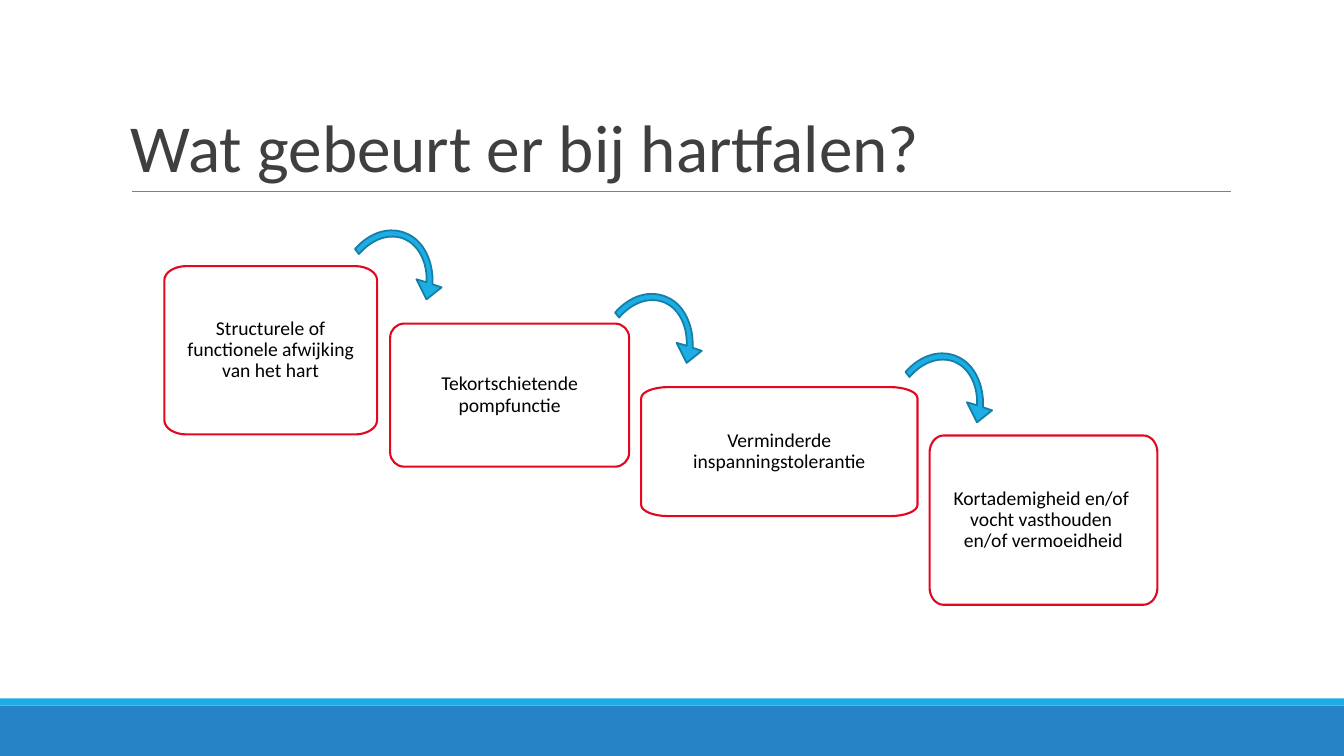
from dataclasses import dataclass
from math import cos, radians, sin
from typing import NamedTuple

from lxml.etree import SubElement
from pptx import Presentation
from pptx.dml.color import RGBColor as Rgb
from pptx.enum.shapes import MSO_CONNECTOR as Connector, MSO_SHAPE as Preset
from pptx.enum.text import MSO_ANCHOR as Anchor, PP_ALIGN as Align
from pptx.oxml.ns import qn
from pptx.util import Emu, Pt

PX = 9144
ARC_PULL = 0.45


@dataclass(frozen=True)
class Theme:
    font: str = "Calibri"
    title_size: int = 48
    step_size: int = 14
    title: Rgb = Rgb(0x3F, 0x3F, 0x3F)
    rule: Rgb = Rgb(0x7F, 0x7F, 0x7F)
    band: Rgb = Rgb(0x26, 0x83, 0xC6)
    accent: Rgb = Rgb(0x1C, 0xAD, 0xE4)
    arrow_edge: Rgb = Rgb(0x14, 0x7E, 0xA6)
    step_fill: Rgb = Rgb(0xFF, 0xFF, 0xFF)
    step_edge: Rgb = Rgb(0xE3, 0x08, 0x20)
    step_text: Rgb = Rgb(0, 0, 0)


class Point(NamedTuple):
    x: float
    y: float


class Frame(NamedTuple):
    left: int
    top: int
    width: int
    height: int


Segment = tuple[Point, ...]


@dataclass(frozen=True)
class Band:
    top: int
    height: int
    color: Rgb


@dataclass(frozen=True)
class Step:
    text: str
    frame: Frame
    radius_x: int
    radius_y: int
    inset: int


THEME = Theme()
WIDTH, HEIGHT = 1333, 750
BANDS = [Band(700, 50, THEME.band), Band(693, 7, THEME.accent)]
STEPS = [
    Step("Structurele of functionele afwijking van het hart", Frame(163, 264, 211, 167), 22, 14, 12),
    Step("Tekortschietende pompfunctie", Frame(387, 321, 237, 142), 14, 14, 11),
    Step("Verminderde inspanningstolerantie", Frame(636, 384, 274, 128), 27, 11, 12),
    Step("Kortademigheid en/of \nvocht vasthouden \nen/of vermoeidheid",
         Frame(922, 432, 226, 168), 14, 17, 11),
]
ARROW_FRAMES = [Frame(327, 217, 110, 135), Frame(585, 280, 110, 135), Frame(873, 339, 110, 135)]
ARROW_TURN = 198.3
ARROW_OUTLINE: list[Segment] = [
    (Point(25, 30),),
    (Point(40, 13), Point(60, 7), Point(77, 15)),
    (Point(93, 22), Point(103, 42), Point(102, 65)),
    (Point(111, 68),),
    (Point(96, 80),),
    (Point(86, 60),),
    (Point(96, 63),),
    (Point(97, 43), Point(88, 26), Point(74, 20)),
    (Point(59, 14), Point(42, 20), Point(29, 35)),
]


def px(length: float) -> Emu:
    return Emu(round(length * PX))


def turned_back(point: Point, frame: Frame, degrees: float) -> Point:
    angle = radians(-degrees)
    mid_x, mid_y = frame.width / 2, frame.height / 2
    x, y = point.x - mid_x, point.y - mid_y
    return Point(mid_x + x * cos(angle) - y * sin(angle),
                 mid_y + x * sin(angle) + y * cos(angle))


def rounded_outline(step: Step) -> list[Segment]:
    width, height = step.frame.width, step.frame.height
    rx, ry = step.radius_x, step.radius_y
    corners = [
        (Point(0, 0), Point(0, ry), Point(rx, 0)),
        (Point(width, 0), Point(width - rx, 0), Point(width, ry)),
        (Point(width, height), Point(width, height - ry), Point(width - rx, height)),
        (Point(0, height), Point(rx, height), Point(0, height - ry)),
    ]
    outline: list[Segment] = []
    for corner, entry, leave in corners:
        pulls = [Point(corner.x + (end.x - corner.x) * ARC_PULL,
                       corner.y + (end.y - corner.y) * ARC_PULL) for end in (entry, leave)]
        outline += [(entry,), (*pulls, leave)]
    return outline + [outline[0]]


def draw_outline(slide, frame: Frame, outline: list[Segment], *, fill: Rgb, edge: Rgb,
                 weight: float, turn: float = 0):
    right, bottom = frame.left + frame.width, frame.top + frame.height
    builder = slide.shapes.build_freeform(px(frame.left), px(frame.top), scale=1.0)
    builder.add_line_segments([(px(right), px(frame.top)), (px(right), px(bottom)),
                               (px(frame.left), px(bottom))], close=True)
    shape = builder.convert_to_shape()
    contour = shape._element.spPr.find(".//" + qn("a:path"))
    for side in list(contour):
        contour.remove(side)
    for index, segment in enumerate(outline):
        tag = "a:moveTo" if index == 0 else "a:cubicBezTo" if len(segment) == 3 else "a:lnTo"
        command = SubElement(contour, qn(tag))
        for point in segment:
            x, y = turned_back(point, frame, turn)
            SubElement(command, qn("a:pt"), x=str(int(px(x))), y=str(int(px(y))))
    SubElement(contour, qn("a:close"))
    shape.rotation = turn
    shape.shadow.inherit = False
    shape.fill.solid()
    shape.fill.fore_color.rgb = fill
    shape.line.color.rgb = edge
    shape.line.width = Pt(weight)
    return shape


def write_text(shape, text: str, *, size: int, color: Rgb, align: Align, anchor: Anchor,
               spacing: float, inset_x: int, inset_y: int) -> None:
    frame = shape.text_frame
    frame.word_wrap = True
    frame.vertical_anchor = anchor
    frame.margin_left = frame.margin_right = px(inset_x)
    frame.margin_top = frame.margin_bottom = px(inset_y)
    paragraph = frame.paragraphs[0]
    paragraph.alignment = align
    paragraph.line_spacing = spacing
    for index, line in enumerate(text.split("\n")):
        if index:
            paragraph.add_line_break()
        run = paragraph.add_run()
        run.text = line
        run.font.name = THEME.font
        run.font.size = Pt(size)
        run.font.color.rgb = color


def draw_band(slide, band: Band) -> None:
    bar = slide.shapes.add_shape(Preset.RECTANGLE, 0, px(band.top), px(WIDTH), px(band.height))
    bar.shadow.inherit = False
    bar.fill.solid()
    bar.fill.fore_color.rgb = band.color
    bar.line.fill.background()


def draw_heading(slide) -> None:
    rule = slide.shapes.add_connector(Connector.STRAIGHT, px(131), px(190), px(1221), px(190))
    rule.line.color.rgb = THEME.rule
    rule.line.width = Pt(0.75)
    SubElement(rule._element.spPr, qn("a:effectLst"))
    title = slide.shapes.add_textbox(px(120), px(31), px(1100), px(159))
    write_text(title, "Wat gebeurt er bij hartfalen?", size=THEME.title_size, color=THEME.title,
               align=Align.LEFT, anchor=Anchor.BOTTOM, spacing=0.85, inset_x=10, inset_y=5)


def main() -> None:
    deck = Presentation()
    deck.slide_width, deck.slide_height = px(WIDTH), px(HEIGHT)
    slide = deck.slides.add_slide(deck.slide_layouts[6])
    for band in BANDS:
        draw_band(slide, band)
    draw_heading(slide)
    for step in STEPS:
        box = draw_outline(slide, step.frame, rounded_outline(step), fill=THEME.step_fill,
                           edge=THEME.step_edge, weight=1.5)
        write_text(box, step.text, size=THEME.step_size, color=THEME.step_text, align=Align.CENTER,
                   anchor=Anchor.MIDDLE, spacing=0.9, inset_x=step.inset, inset_y=step.inset)
    for frame in ARROW_FRAMES:
        draw_outline(slide, frame, ARROW_OUTLINE, fill=THEME.accent, edge=THEME.arrow_edge,
                     weight=1.25, turn=ARROW_TURN)
    deck.save("out.pptx")


if __name__ == "__main__":
    main()
